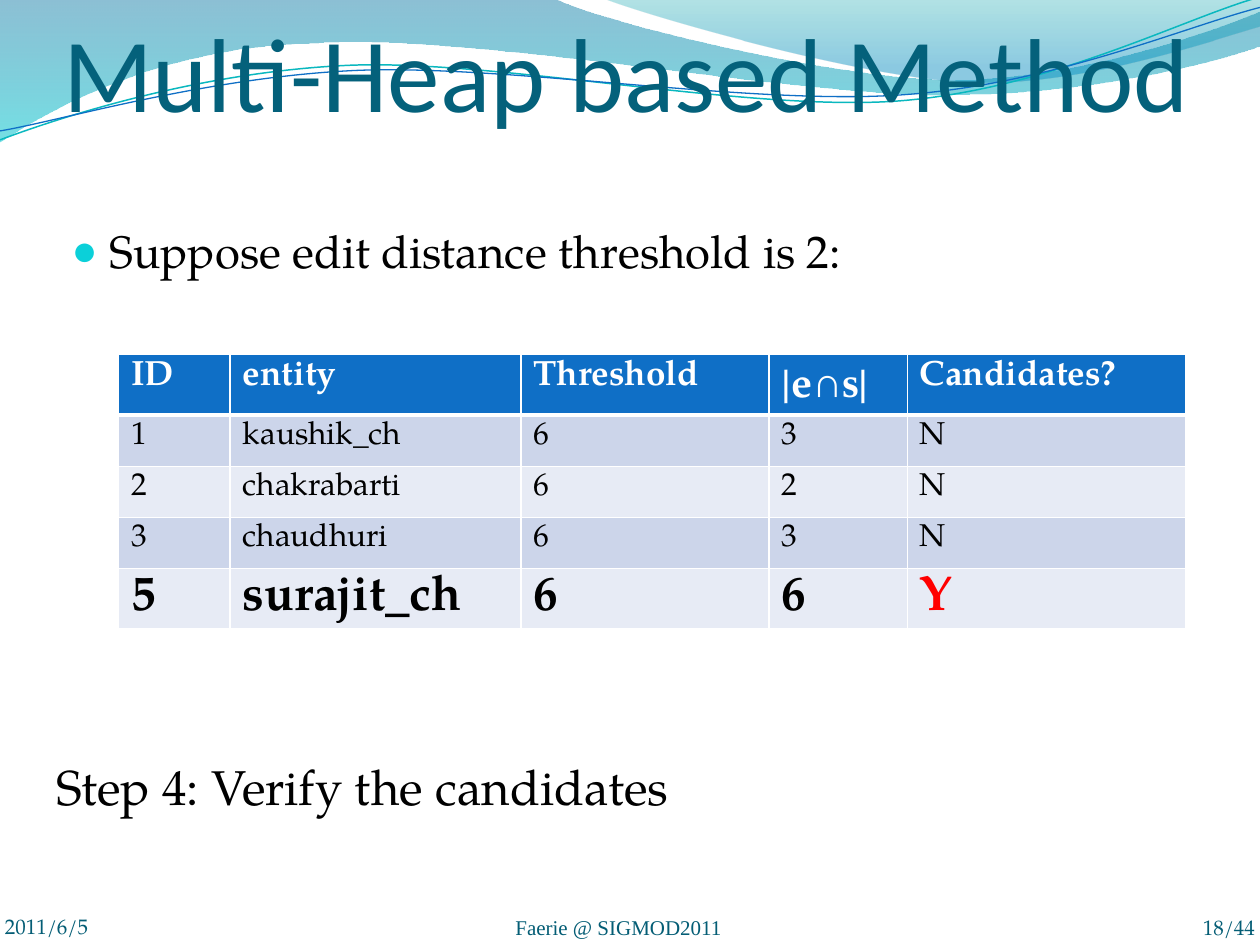
"""Build the Multi-Heap based Method slide with its candidate table."""
import pptx
import pptx.dml.color
import pptx.enum.text
import pptx.oxml
import pptx.oxml.ns
import pptx.util

Cm = pptx.util.Cm
Pt = pptx.util.Pt
RGBColor = pptx.dml.color.RGBColor
ALIGN = pptx.enum.text.PP_ALIGN
ANCHOR = pptx.enum.text.MSO_ANCHOR
AUTO_SIZE = pptx.enum.text.MSO_AUTO_SIZE
qn = pptx.oxml.ns.qn

BLACK = RGBColor(0x00, 0x00, 0x00)
WHITE = RGBColor(0xFF, 0xFF, 0xFF)
RED = RGBColor(0xFF, 0x00, 0x00)
TITLE_TEAL = RGBColor(0x04, 0x61, 0x7B)
FOOTER_TEAL = RGBColor(0x04, 0x5D, 0x75)
BULLET_CYAN = RGBColor(0x0B, 0xD0, 0xD9)
LINE_TEAL = RGBColor(0x0A, 0xB8, 0xBF)
BLUE = RGBColor(0x0F, 0x6F, 0xC6)
BAND_DARK = RGBColor(0xCC, 0xD5, 0xEA)
BAND_LIGHT = RGBColor(0xE7, 0xEB, 0xF5)
WAVE_BLUE = RGBColor(0x00, 0x74, 0xA1)
WAVE_CYAN = RGBColor(0x00, 0xC6, 0xCF)
CREST_TEAL = RGBColor(0x00, 0xA1, 0xA9)
CREST_BLUE = RGBColor(0x00, 0x8B, 0xBF)

SERIF = "TeX Gyre Pagella"
TIMES = "Times New Roman"
NAMESPACE = pptx.oxml.ns.nsdecls("a")


def add_run(paragraph, text, size, color, name=SERIF, bold=False):
    run = paragraph.add_run()
    run.text = text
    run.font.color.rgb = color
    for attribute, value in {"size": Pt(size), "name": name, "bold": bold}.items():
        setattr(run.font, attribute, value)


def add_curve(shapes, start, segments, closed):
    builder = shapes.build_freeform(Cm(start[0]), Cm(start[1]))
    builder.add_line_segments([(Cm(segment[-2]), Cm(segment[-1])) for segment in segments], close=closed)
    shape = builder.convert_to_shape()
    shape.shadow.inherit = False
    outline = next(shape.element.spPr.iter(qn("a:path")))
    for line, segment in zip(outline.findall(qn("a:lnTo")), segments):
        if len(segment) == 6:
            points = "".join(f'<a:pt x="{Cm(x) - shape.left}" y="{Cm(y) - shape.top}"/>'
                             for x, y in zip(segment[::2], segment[1::2]))
            outline.replace(line, pptx.oxml.parse_xml(
                f"<a:cubicBezTo {NAMESPACE}>{points}</a:cubicBezTo>"))
    return shape


presentation = pptx.Presentation()
presentation.slide_width = Cm(25.4)
presentation.slide_height = Cm(19.05)
slide = presentation.slides.add_slide(presentation.slide_layouts[1])
shapes = slide.shapes

waves = [
    ((0, 0),
     [(11.18, -0.03), (12.09, 0.43, 16.87, 1.6, 19.25, 1.6),
      (21.67, 1.6, 24.33, 0.66, 25.4, 0.23), (25.43, 0.91),
      (24.97, 1.12, 22.1, 1.93, 18.95, 1.91), (15.8, 1.91, 9.7, 0.71, 6.53, 0.86),
      (3.28, 0.91, 1.17, 2.11, -0.03, 2.87)],
     [(0, WAVE_BLUE, 45), (1, WAVE_CYAN, 55)]),
    ((12.17, -0.03),
     [(12.93, 0.28, 17.32, 1.57, 19.53, 1.65), (21.74, 1.75, 24.41, 0.81, 25.4, 0.53),
      (25.4, 0)],
     [(0, CREST_TEAL, 30), (0.8, CREST_BLUE, 45)]),
]
for start, segments, stops in waves:
    wave = add_curve(shapes, start, segments, True)
    wave.line.fill.background()
    wave.fill.gradient()
    wave.fill.gradient_angle = 270
    for stop, (position, color, opacity) in zip(wave.fill.gradient_stops, stops):
        stop.position = position
        stop.color.rgb = color
    for element, (position, color, opacity) in zip(wave.element.spPr.iter(qn("a:srgbClr")), stops):
        element.append(pptx.oxml.parse_xml(f'<a:alpha {NAMESPACE} val="{opacity * 1000}"/>'))

strands = [
    ((-0.05, 2.22),
     [(1.19, 1.82, 4.02, 1.04, 7.05, 1.05), (10.05, 1.07, 15.02, 2.37, 18.08, 2.29),
      (21.13, 2.2, 23.87, 0.91, 25.41, 0.55)], LINE_TEAL, 0.85),
    ((-0.04, 2.04),
     [(1.16, 1.9, 4.18, 1.15, 7.2, 1.16), (10.25, 1.18, 15.13, 2.25, 18.18, 2.17),
      (21.21, 2.1, 23.93, 1.06, 25.45, 0.75)], BLUE, 0.75),
]
for start, segments, color, width in strands:
    strand = add_curve(shapes, start, segments, False)
    strand.rotation = 357.3
    strand.fill.background()
    strand.line.color.rgb = color
    strand.line.width = Pt(width)

title, body = shapes.title, slide.placeholders[1]
for placeholder, box in ((title, (1.27, -0.48, 22.86, 3.18)), (body, (1.19, 4.37, 22.86, 12.19))):
    shapes.element.append(placeholder.element)
    for attribute, value in zip(("left", "top", "width", "height"), box):
        setattr(placeholder, attribute, Cm(value))

title_format = {"margin_left": 0, "margin_right": 0, "margin_top": Cm(0.13), "margin_bottom": 0,
                "vertical_anchor": ANCHOR.BOTTOM, "auto_size": AUTO_SIZE.NONE}
for attribute, value in title_format.items():
    setattr(title.text_frame, attribute, value)
paragraph = title.text_frame.paragraphs[0]
paragraph.alignment = ALIGN.LEFT
add_run(paragraph, "Multi-Heap based Method", 60, TITLE_TEAL, "Calibri")

paragraph = body.text_frame.paragraphs[0]
add_run(paragraph, "Suppose edit distance threshold is 2:", 26, BLACK)
properties = paragraph._p.get_or_add_pPr()
properties.set("marL", str(Cm(0.76)))
properties.set("indent", str(Cm(-0.76)))
for bullet in (f'<a:buClr {NAMESPACE}><a:srgbClr val="{BULLET_CYAN}"/></a:buClr>',
               f'<a:buSzPct {NAMESPACE} val="95000"/>',
               f'<a:buChar {NAMESPACE} char="●"/>'):
    properties.append(pptx.oxml.parse_xml(bullet))

rows = [
    ("ID", "entity", "Threshold", "|e∩s|", "Candidates?"),
    ("1", "kaushik_ch", "6", "3", "N"),
    ("2", "chakrabarti", "6", "2", "N"),
    ("3", "chaudhuri", "6", "3", "N"),
    ("5", "surajit_ch", "6", "6", "Y"),
]
column_widths = (2.25, 5.86, 5, 2.79, 5.61)
table_frame = shapes.add_table(len(rows), len(column_widths), Cm(2.39), Cm(7.14),
                               Cm(sum(column_widths)), Cm(5.15))
table = table_frame.table
for column, width in zip(table.columns, column_widths):
    column.width = Cm(width)
for row_index, texts in enumerate(rows):
    header, verified = row_index == 0, row_index == len(rows) - 1
    table.rows[row_index].height = Cm(1.03)
    for column_index, text in enumerate(texts):
        cell = table.cell(row_index, column_index)
        cell.fill.solid()
        cell.fill.fore_color.rgb = BLUE if header else BAND_DARK if row_index % 2 else BAND_LIGHT
        paragraph = cell.text_frame.paragraphs[0]
        if text == "|e∩s|":
            for part, name in (("|e", SERIF), ("∩s", TIMES), ("|", SERIF)):
                add_run(paragraph, part, 24, WHITE, name, True)
        else:
            color = WHITE if header else RED if text == "Y" else BLACK
            add_run(paragraph, text, 20 if header else 28 if verified else 18, color,
                    bold=header or verified)
        cell_properties = cell._tc.get_or_add_tcPr()
        top = 3 if row_index == 1 else 1
        bottom = 3 if header else 1
        for index, (side, width) in enumerate((("L", 1), ("R", 1), ("T", top), ("B", bottom))):
            cell_properties.insert(index, pptx.oxml.parse_xml(
                f'<a:ln{side} {NAMESPACE} w="{Pt(width)}"><a:solidFill>'
                f'<a:srgbClr val="{WHITE}"/></a:solidFill></a:ln{side}>'))
table_frame.height = Cm(5.79)

step_box = shapes.add_textbox(Cm(0.89), Cm(15.12), Cm(23.83), Cm(1.45))
step_box.text_frame.word_wrap = True
step_box.text_frame.auto_size = AUTO_SIZE.SHAPE_TO_FIT_TEXT
add_run(step_box.text_frame.paragraphs[0], "Step 4: Verify the candidates", 28, BLACK)

footers = [
    ("2011/6/5", 0.1, 17.91, 5.92, SERIF, ALIGN.LEFT),
    ("Faerie @ SIGMOD2011", 10.39, 17.93, 9.32, TIMES, ALIGN.LEFT),
    ("18/44", 23.19, 17.93, 2.11, SERIF, ALIGN.RIGHT),
]
footer_format = {"margin_left": 0, "margin_right": 0, "margin_top": 0, "margin_bottom": 0,
                 "vertical_anchor": ANCHOR.BOTTOM, "word_wrap": True}
for text, left, top, width, name, alignment in footers:
    text_frame = shapes.add_textbox(Cm(left), Cm(top), Cm(width), Cm(1.02)).text_frame
    for attribute, value in footer_format.items():
        setattr(text_frame, attribute, value)
    text_frame.paragraphs[0].alignment = alignment
    add_run(text_frame.paragraphs[0], text, 12, FOOTER_TEAL, name)

presentation.save("out.pptx")
